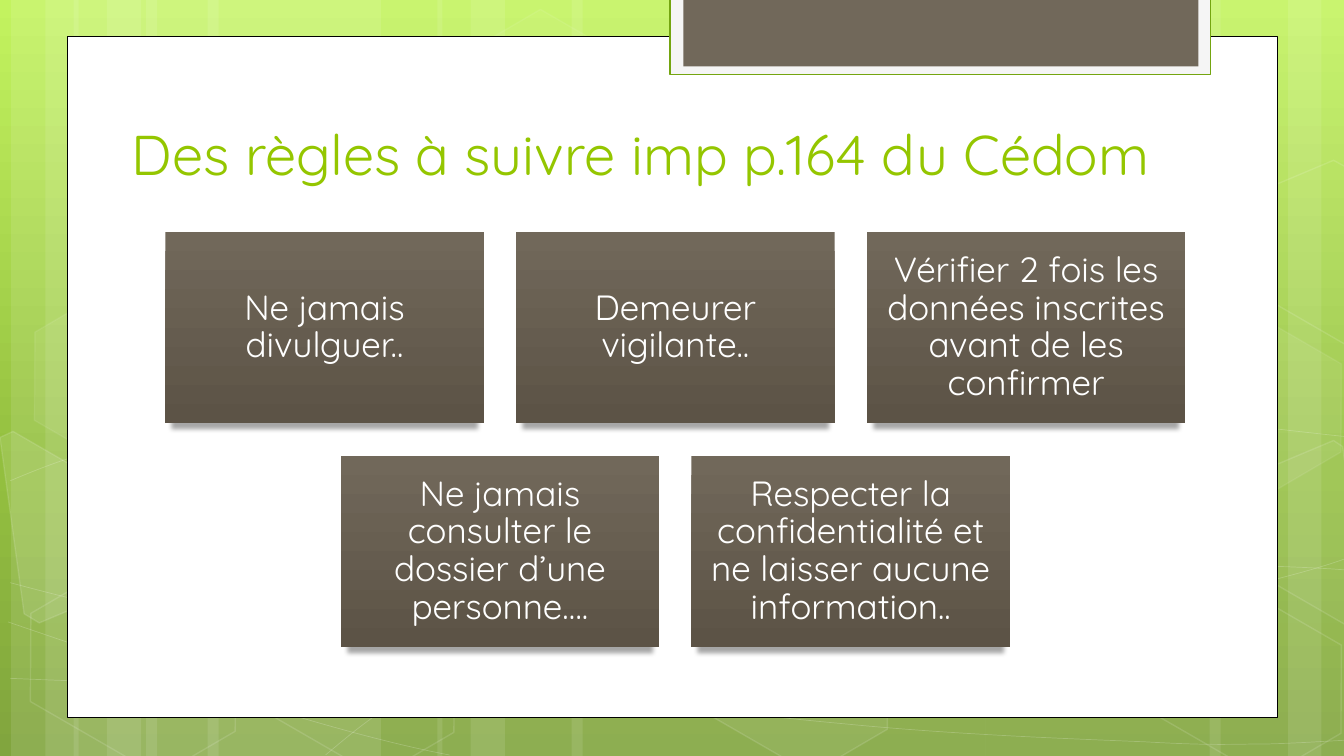
from lxml.etree import SubElement
from pptx import Presentation
from pptx.dml.color import RGBColor
from pptx.enum.shapes import MSO_SHAPE as Shape
from pptx.enum.text import MSO_ANCHOR as Anchor, PP_ALIGN as Align
from pptx.oxml.ns import qn
from pptx.util import Inches, Pt

TITLE = "Des règles à suivre imp p.164 du Cédom"
RULES = [
    ["Ne jamais divulguer..", "Demeurer vigilante..",
     "Vérifier 2 fois les données inscrites avant de les confirmer"],
    ["Ne jamais consulter le dossier d’une personne….",
     "Respecter la confidentialité et ne laisser aucune information.."],
]
FONT = "Quicksand"
COLORS = {"white": "FFFFFF", "black": "000000", "title": "94C600", "tab": "F5F5F5",
          "tab_line": "74A510", "brown": "71685A", "dark_brown": "5C5346",
          "lime": "C3F35F", "green": "93BF3F", "moss": "81A53E"}
WIDTH, HEIGHT = 40 / 3, 7.5
TILE_WIDTH, TILE_HEIGHT, GAP = 3.16, 1.9, 0.32
TILES_CENTER, TILES_TOP = 6.7, 2.3

STRIPES = [(1.45, 2.33), (0.11, 0.67), (0.45, 1.11), (2.06, 2.33), (0.73, 0.67), (1.06, 1.11),
           (9.78, 2.33), (12.78, 0.67), (12, 1.11), (5.67, 4.11), (4.34, 0.67), (4.67, 1.11)]
WAVES = [
    [(0.1, 6.73), (0.82, 6.76), (1.54, 6.79), (2.54, 6.78), (3.54, 6.77), (4.77, 6.75),
     (6.1, 6.65), (7.44, 6.55), (9.33, 6.36), (10.55, 6.17), (11.78, 5.98), (13.03, 5.68),
     (13.43, 5.51)],
    [(0.1, 4.77), (0.48, 4.61), (0.86, 4.46), (1.62, 4.31), (2.38, 4.16), (3.45, 3.94),
     (4.63, 3.87), (5.82, 3.8), (7.25, 3.79), (8.72, 3.87), (10.19, 3.95), (12.63, 4.26),
     (13.43, 4.34)],
    [(0.08, 6.17), (1.69, 6.72), (3.3, 7.27), (4.46, 7.49)],
    [(0.1, 5.78), (0.51, 5.89), (0.93, 6), (1.71, 6.16), (2.48, 6.31), (3.64, 6.56),
     (4.75, 6.73), (5.86, 6.9), (7.27, 7.08), (8.37, 7.18), (9.48, 7.29), (10.66, 7.33),
     (11.37, 7.36), (12.07, 7.4), (12.25, 7.38), (12.6, 7.38), (12.94, 7.37), (13.19, 7.35),
     (13.43, 7.34)],
    [(3.23, 7.49), (3.47, 7.29), (3.7, 7.09), (4.03, 6.91), (4.35, 6.73), (4.8, 6.53),
     (5.17, 6.39), (5.54, 6.25), (5.77, 6.19), (6.26, 6.09), (6.75, 5.99), (7.65, 5.85),
     (8.11, 5.78), (8.58, 5.71), (8.65, 5.71), (9.07, 5.69), (9.48, 5.66), (10.13, 5.63),
     (10.59, 5.62), (11.05, 5.61), (11.82, 5.62), (11.82, 5.62), (12.1, 5.62), (12.4, 5.62),
     (12.7, 5.62), (12.95, 5.63), (13.17, 5.64), (13.29, 5.65), (13.41, 5.66), (13.37, 5.65),
     (13.41, 5.66)],
]
HEXAGONS = [(4.45, 0.36, 4, 8), (6.62, 5.89, 6, 12), (0.15, 5.91, 0, 12), (0.19, 3.12, 7, 8),
            (2.32, 5.92, 0, 12), (11.12, 5.93, 0, 12), (11.12, 3.14, 7, 8)]
CUT_HEXAGONS = [
    ([(0, 4.34), (0.13, 4.28), (1.15, 4.87), (1.27, 5.81), (0.39, 6.18), (0.24, 6.09)], 10),
    ([(12.35, 4.74), (13.23, 4.37), (13.32, 4.43), (13.57, 6.25), (13.49, 6.28),
      (12.47, 5.69)], 4),
    ([(12.35, 1.96), (13.23, 1.59), (13.34, 1.65), (13.57, 3.46), (13.49, 3.5),
      (12.47, 2.91)], 0),
]


def add_alpha(color, percent):
    SubElement(color, qn("a:alpha"), val=str(percent * 1000))


def set_gradient(fill, owner, stops):
    fill.gradient()
    fill.gradient_angle = 270
    stop_list = owner.xpath(".//a:gsLst")[0]
    for stop in list(stop_list):
        stop_list.remove(stop)
    for position, name in stops:
        stop = SubElement(stop_list, qn("a:gs"), pos=str(position * 1000))
        SubElement(stop, qn("a:srgbClr"), val=COLORS[name])


def style(shape, fill=None, alpha=100, line=None, weight=1, line_alpha=100):
    shape.shadow.inherit = False
    for target, name, percent, where in ((shape.fill, fill, alpha, "./p:spPr/a:solidFill"),
                                         (shape.line.fill, line, line_alpha, "./p:spPr/a:ln")):
        if not name or not percent:
            target.background()
            continue
        target.solid()
        target.fore_color.rgb = RGBColor.from_string(COLORS[name])
        if percent < 100:
            add_alpha(shape._element.xpath(where + "//a:srgbClr")[0], percent)
    if line:
        shape.line.width = Pt(weight)


def add_box(page, left, top, width, height, kind=Shape.RECTANGLE, **look):
    box = page.shapes.add_shape(kind, *map(Inches, (left, top, width, height)))
    style(box, **look)
    return box


def add_outline(page, points, close=False, **look):
    points = [(Inches(x), Inches(y)) for x, y in points]
    builder = page.shapes.build_freeform(*points[0])
    builder.add_line_segments(points[1:], close=close)
    outline = builder.convert_to_shape()
    style(outline, **look)
    return outline


def add_wave(page, knots):
    wave = add_outline(page, knots, line="white", weight=0.5, line_alpha=20)
    track = wave._element.xpath(".//a:custGeom/a:pathLst/*")[0]
    segments = track.findall(qn("a:lnTo"))
    for start in range(0, len(segments), 3):
        curve = SubElement(track, qn("a:cubicBezTo"))
        for segment in segments[start:start + 3]:
            curve.append(segment[0])
            track.remove(segment)


def write(box, text, size, color, align=Align.LEFT, anchor=Anchor.MIDDLE, spacing=1, inset=0.05):
    frame = box.text_frame
    frame.word_wrap = True
    frame.vertical_anchor = anchor
    frame.margin_left = frame.margin_right = Inches(0.1)
    frame.margin_top = frame.margin_bottom = Inches(inset)
    para = frame.paragraphs[0]
    para.alignment = align
    para.line_spacing = spacing
    span = para.add_run()
    span.text = text
    span.font.name = FONT
    span.font.size = Pt(size)
    span.font.color.rgb = RGBColor.from_string(COLORS[color])


def add_tile(page, left, top, text):
    tile = add_box(page, left, top, TILE_WIDTH, TILE_HEIGHT)
    set_gradient(tile.fill, tile._element, [(0, "brown"), (100, "dark_brown")])
    effects = tile._element.xpath("./p:spPr/a:effectLst")[0]
    shadow = SubElement(effects, qn("a:outerShdw"), blurRad=str(Pt(3.5)), dist=str(Pt(4)),
                        dir="5400000", sx="96000", sy="100000", algn="b", rotWithShape="0")
    add_alpha(SubElement(shadow, qn("a:srgbClr"), val=COLORS["black"]), 34)
    write(tile, text, 25, "white", align=Align.CENTER, spacing=0.9, inset=0.1)


def add_backdrop(page):
    set_gradient(page.background.fill, page._element, [(0, "lime"), (62, "green"), (100, "moss")])
    for left, width in STRIPES:
        add_box(page, left, 0, width, HEIGHT, fill="white", alpha=10)
    for knots in WAVES:
        add_wave(page, knots)
    for left, top, alpha, line_alpha in HEXAGONS:
        hexagon = add_box(page, left, top, 2.34, 1.52, Shape.HEXAGON, fill="white", alpha=alpha,
                          line="white", line_alpha=line_alpha)
        hexagon.rotation = 30
        hexagon.adjustments[0] = 0.285
        hexagon.adjustments[1] = 1.155
    for corners, alpha in CUT_HEXAGONS:
        add_outline(page, corners, close=True, fill="white", alpha=alpha, line="white",
                    line_alpha=12)
    add_box(page, 0.67, 0.36, 12, 6.76, fill="white", line="black", weight=0.5)
    add_box(page, 6.65, -0.02, 5.36, 0.76, fill="tab", line="tab_line", weight=1.25)
    add_box(page, 6.78, -0.02, 5.11, 0.68, fill="brown")


def main():
    deck = Presentation()
    deck.slide_width, deck.slide_height = Inches(WIDTH), Inches(HEIGHT)
    page = deck.slides.add_slide(deck.slide_layouts[6])
    add_backdrop(page)
    heading = page.shapes.add_textbox(*map(Inches, (1.21, 0.31, 11, 1.59)))
    write(heading, TITLE, 40, "title", anchor=Anchor.BOTTOM)
    for row, rules in enumerate(RULES):
        row_width = len(rules) * (TILE_WIDTH + GAP) - GAP
        for column, rule in enumerate(rules):
            left = TILES_CENTER - row_width / 2 + column * (TILE_WIDTH + GAP)
            add_tile(page, left, TILES_TOP + row * (TILE_HEIGHT + GAP), rule)
    deck.save("out.pptx")


if __name__ == "__main__":
    main()
